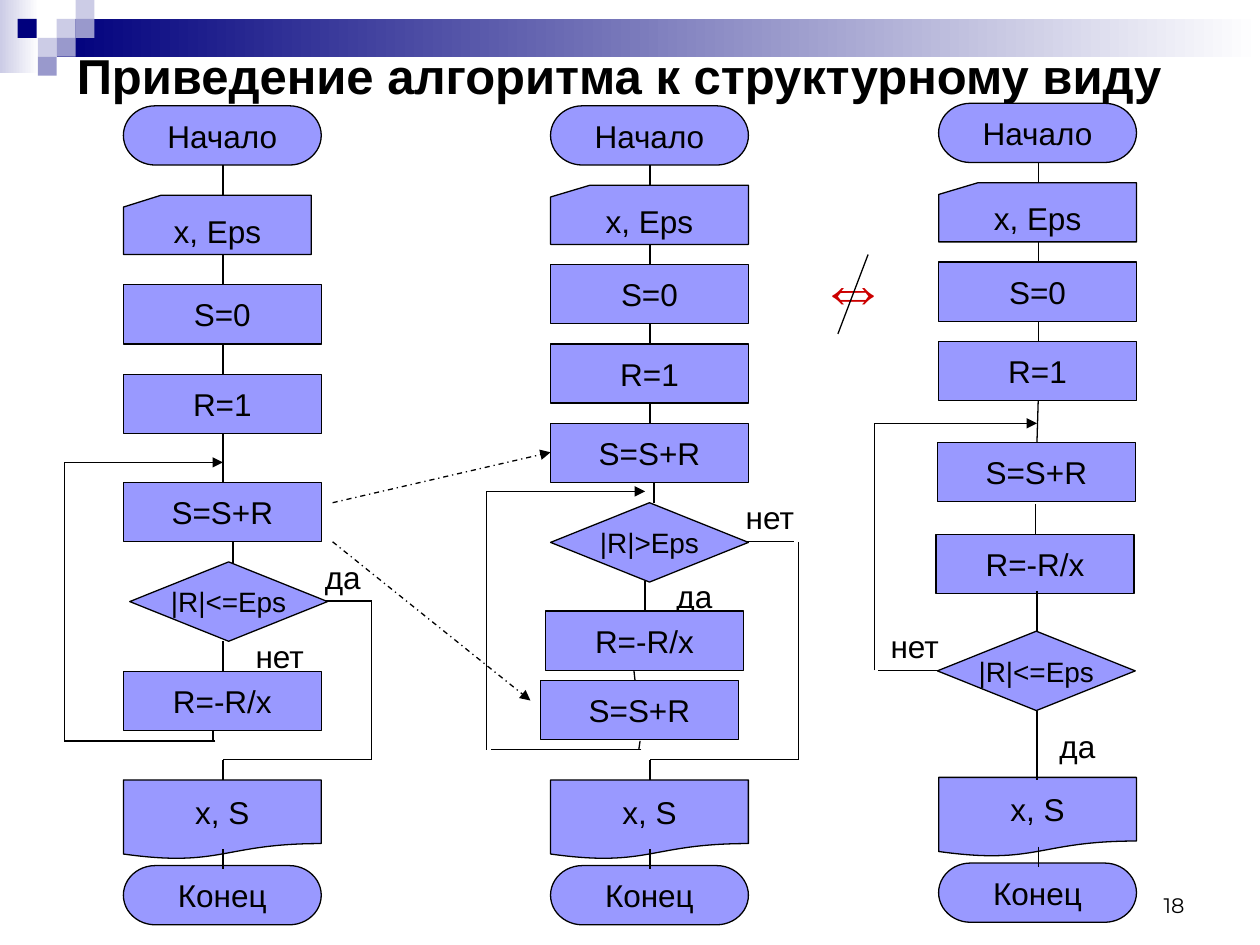
import itertools

import pptx
import pptx.util
import pptx.dml.color
import pptx.enum.dml
import pptx.enum.shapes
import pptx.enum.text
import pptx.oxml
import pptx.oxml.ns

Inches = pptx.util.Inches
Pt = pptx.util.Pt
RGBColor = pptx.dml.color.RGBColor
Kind = pptx.enum.shapes.MSO_SHAPE
Align = pptx.enum.text.PP_ALIGN
Anchor = pptx.enum.text.MSO_ANCHOR
Fit = pptx.enum.text.MSO_AUTO_SIZE

BLACK = RGBColor(0x00, 0x00, 0x00)
WHITE = RGBColor(0xFF, 0xFF, 0xFF)
NAVY = RGBColor(0x00, 0x00, 0x7D)
PALE = RGBColor(0xCC, 0xCC, 0xE6)
MID = RGBColor(0x99, 0x99, 0xCC)
BLOCK = RGBColor(0x99, 0x99, 0xFF)
RED = RGBColor(0xCC, 0x00, 0x00)

WIDE, LOW, TALL = 1.57, 0.47, 0.63
HALF = 0.79


def write(frame, text, size, color=BLACK, bold=False, align=Align.LEFT, font="Arial"):
    frame.text = text
    line = frame.paragraphs[0]
    line.alignment = align
    line.font.name = font
    line.font.size = Pt(size)
    line.font.bold = bold
    line.font.color.rgb = color


def add_shape(slide, kind, left, top, width, height):
    shape = slide.shapes.add_shape(
        kind, Inches(left), Inches(top), Inches(width), Inches(height))
    shape.shadow.inherit = False
    return shape


def add_tile(slide, left, top, color, width=0.15, height=0.15, fade=False):
    tile = add_shape(slide, Kind.RECTANGLE, left, top, width, height)
    tile.line.fill.background()
    if fade:
        tile.fill.gradient()
        tile.fill.gradient_angle = 0
        for stop, shade in zip(tile.fill.gradient_stops, (color, WHITE)):
            stop.color.rgb = shade
    else:
        tile.fill.solid()
        tile.fill.fore_color.rgb = color


def add_block(slide, text, left, top, kind=Kind.RECTANGLE, width=WIDE, height=LOW, size=18):
    block = add_shape(slide, kind, left, top, width, height)
    block.fill.solid()
    block.fill.fore_color.rgb = BLOCK
    block.line.color.rgb = BLACK
    block.line.width = Pt(0.75)
    frame = block.text_frame
    frame.word_wrap = False
    frame.vertical_anchor = Anchor.MIDDLE
    write(frame, text, size, align=Align.CENTER)


def add_test(slide, text, left, top):
    add_block(slide, text, left, top, Kind.DIAMOND, height=TALL, size=16)


def add_label(slide, text, left, top, width=0.71, height=0.4, **style):
    box = slide.shapes.add_textbox(
        Inches(left), Inches(top), Inches(width), Inches(height))
    box.text_frame.word_wrap = False
    box.text_frame.auto_size = Fit.SHAPE_TO_FIT_TEXT
    write(box.text_frame, text, **{"size": 18, **style})


def add_route(slide, *points, arrow=False, dash=False):
    """Join the points with straight lines; an arrow goes on the last one."""
    for (x1, y1), (x2, y2) in itertools.pairwise(points):
        line = slide.shapes.add_connector(
            pptx.enum.shapes.MSO_CONNECTOR.STRAIGHT,
            Inches(x1), Inches(y1), Inches(x2), Inches(y2))
        line.line.color.rgb = BLACK
        line.line.width = Pt(0.75)
        if dash:
            line.line.dash_style = pptx.enum.dml.MSO_LINE.DASH_DOT
        props = line.element.spPr
        props.append(pptx.oxml.parse_xml(
            "<a:effectLst %s/>" % pptx.oxml.ns.nsdecls("a")))
    if arrow:
        line.line.fill.solid()
        line.line.color.rgb = BLACK
        props.find(pptx.oxml.ns.qn("a:ln")).append(pptx.oxml.parse_xml(
            '<a:tailEnd %s type="triangle"/>' % pptx.oxml.ns.nsdecls("a")))


def add_ends(slide, left, top, step, card=WIDE):
    """Draw the steps that all three flows share: the first four and the last two."""
    mid = left + HALF
    heads = (("Начало", Kind.FLOWCHART_TERMINATOR, WIDE),
             ("x, Eps", Kind.FLOWCHART_CARD, card),
             ("S=0", Kind.RECTANGLE, WIDE),
             ("R=1", Kind.RECTANGLE, WIDE))
    for row, (text, kind, width) in enumerate(heads):
        y = top + row * step
        if row:
            add_route(slide, (mid, y - step + LOW), (mid, y))
        add_block(slide, text, left, y, kind, width)
    add_block(slide, "x, S", left, top + 5.35, Kind.FLOWCHART_DOCUMENT, height=TALL)
    add_block(slide, "Конец", left, top + 6.03, Kind.FLOWCHART_TERMINATOR)
    add_route(slide, (mid, top + 5.9), (mid, top + 6.06))


def add_decor(slide):
    add_tile(slide, 0, 0, PALE, 0.31, 0.58, fade=True)
    add_tile(slide, 0.45, 0.15, NAVY, 9.55, 0.3, fade=True)
    for left, top, color in ((0.45, 0.15, PALE), (0.6, 0, PALE), (0.6, 0.15, MID),
                             (0.3, 0.3, PALE), (0.14, 0.15, NAVY),
                             (0.45, 0.3, MID), (0.3, 0.45, MID)):
        add_tile(slide, left, top, color)


def add_title(slide):
    title = slide.shapes.title
    title.left, title.top = Inches(0.51), Inches(0.28)
    title.width, title.height = Inches(9.49), Inches(0.63)
    title.text_frame.auto_size = Fit.NONE
    title.text_frame.vertical_anchor = Anchor.MIDDLE
    write(title.text_frame, "Приведение алгоритма к структурному виду", 28, bold=True)
    title.element.getparent().append(title.element)


def add_first(slide):
    add_ends(slide, 0.98, 0.84, 0.71, card=1.49)
    add_route(slide, (1.77, 3.83), (1.77, 3.44))
    add_route(slide, (1.85, 4.47), (1.85, 4.3))
    add_route(slide, (1.77, 5.09), (1.77, 5.33))
    add_route(slide, (1.69, 5.79), (1.69, 5.88))
    add_route(slide, (1.71, 5.88), (0.51, 5.88), (0.51, 3.67), (1.77, 3.67), arrow=True)
    add_route(slide, (2.56, 4.77), (2.95, 4.77), (2.95, 6.03), (1.77, 6.03), (1.77, 6.19))
    add_block(slide, "S=S+R", 0.98, 3.83)
    add_test(slide, "|R|<=Eps", 1.03, 4.46)
    add_label(slide, "нет", 1.93, 5.01, 0.59)
    add_label(slide, "да", 2.48, 4.38, 0.49)
    add_block(slide, "R=-R/x", 0.98, 5.33)


def add_second(slide):
    add_ends(slide, 4.37, 0.84, 0.63)
    add_route(slide, (5.16, 3.44), (5.16, 3.2))
    add_route(slide, (5.19, 3.99), (5.19, 3.82))
    add_route(slide, (5.12, 4.61), (5.12, 4.85))
    add_route(slide, (5.03, 5.31), (5.04, 5.4))
    add_route(slide, (5.08, 5.88), (5.07, 5.95))
    add_route(slide, (5.09, 5.95), (3.9, 5.95))
    add_route(slide, (3.86, 5.95), (3.86, 3.9), (5.12, 3.9), arrow=True)
    add_route(slide, (5.9, 4.3), (6.3, 4.3))
    add_route(slide, (6.34, 4.3), (6.34, 6.03), (5.16, 6.03), (5.16, 6.19))
    add_block(slide, "S=S+R", 4.37, 3.36)
    add_test(slide, "|R|>Eps", 4.37, 3.99)
    add_label(slide, "да", 5.27, 4.53, 0.49)
    add_label(slide, "нет", 5.82, 3.9)
    add_block(slide, "R=-R/x", 4.33, 4.85)
    add_block(slide, "S=S+R", 4.29, 5.4)


def add_third(slide):
    add_ends(slide, 7.45, 0.82, 0.63)
    add_route(slide, (8.23, 3.51), (8.24, 3.18))
    add_route(slide, (8.22, 4), (8.22, 4.24))
    add_route(slide, (6.97, 5.32), (7.44, 5.32))
    add_route(slide, (6.94, 5.32), (6.94, 3.36), (8.23, 3.36), arrow=True)
    add_block(slide, "S=S+R", 7.44, 3.51)
    add_block(slide, "R=-R/x", 7.43, 4.24)
    add_test(slide, "|R|<=Eps", 7.44, 5.01)
    add_label(slide, "да", 8.31, 5.72, 0.49)
    add_label(slide, "нет", 6.97, 4.93)
    add_route(slide, (8.23, 4.69), (8.23, 5.01))
    add_route(slide, (8.23, 5.64), (8.23, 6.19))


def add_page(slide):
    box = slide.shapes.add_textbox(Inches(7.17), Inches(6.83), Inches(2.33), Inches(0.5))
    box.text_frame.word_wrap = True
    box.text_frame.vertical_anchor = Anchor.BOTTOM
    write(box.text_frame, "18", 12, align=Align.RIGHT, font="Montserrat")


def main():
    deck = pptx.Presentation()
    deck.slide_width, deck.slide_height = Inches(10), Inches(7.5)
    slide = deck.slides.add_slide(deck.slide_layouts[5])
    add_decor(slide)
    add_page(slide)
    add_title(slide)
    add_first(slide)
    add_second(slide)
    for end, start in (((4.21, 5.56), 4.3), ((4.37, 3.59), 3.99)):
        add_route(slide, (2.64, start), end, arrow=True, dash=True)
    add_third(slide)
    add_label(slide, "⇔", 6.4, 1.89, 0.78, 0.77, size=40, color=RED, bold=True)
    add_route(slide, (6.89, 2.02), (6.65, 2.65))
    deck.save("out.pptx")


if __name__ == "__main__":
    main()
